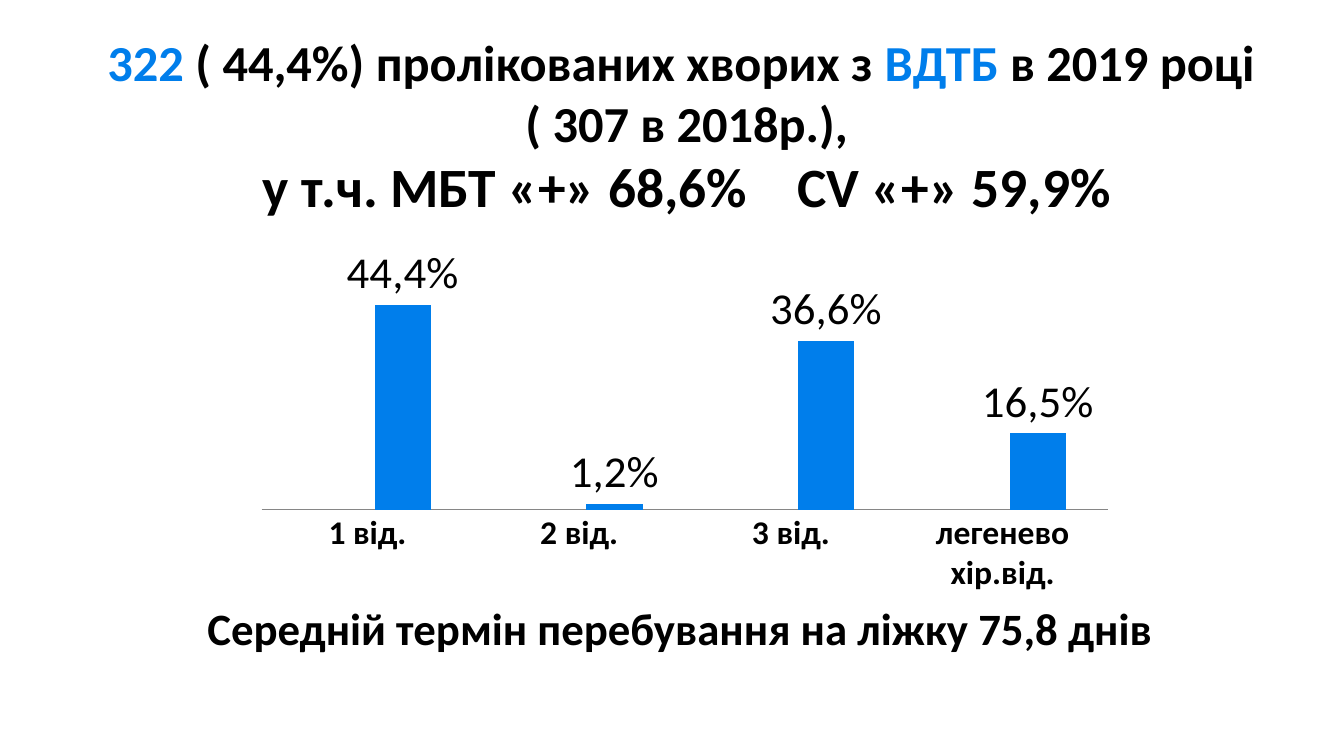
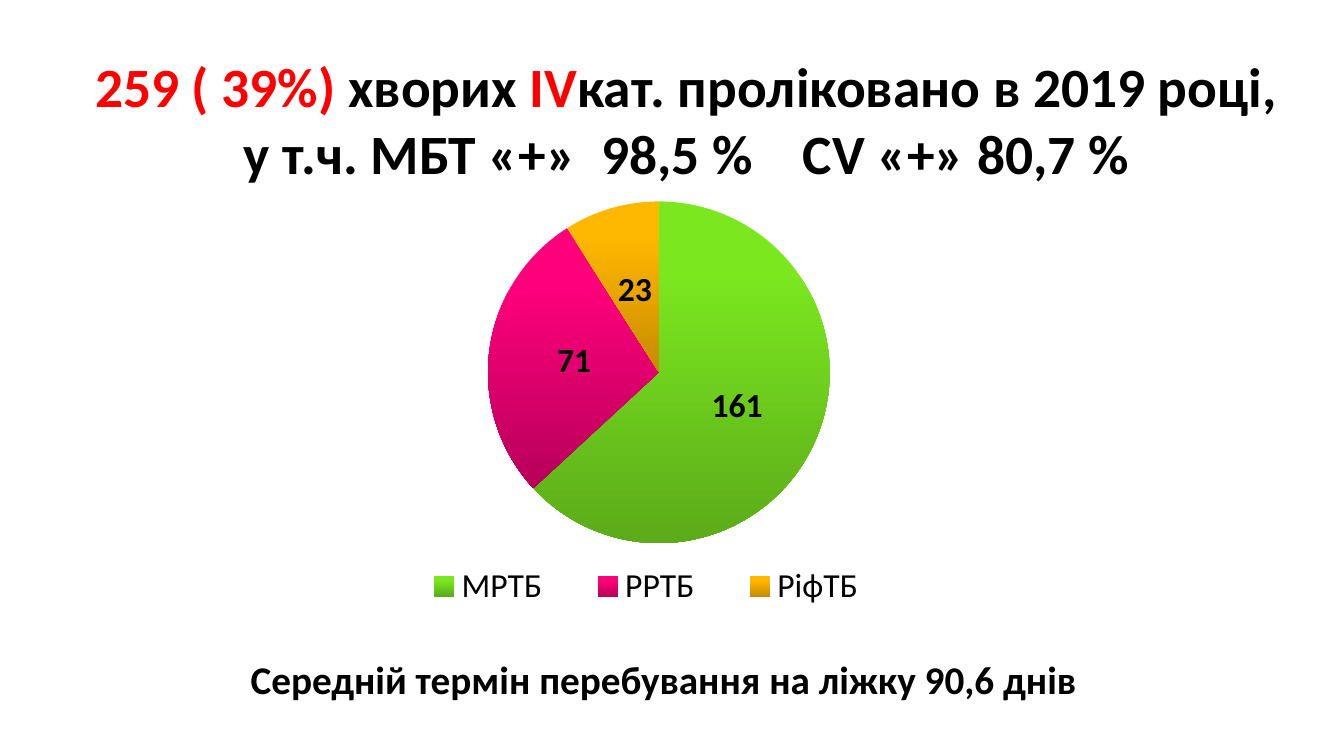
from lxml import etree
from pptx import Presentation
from pptx.chart.data import CategoryChartData
from pptx.dml.color import RGBColor
from pptx.enum import chart as ch, text
from pptx.oxml.ns import qn
from pptx.util import Cm, Pt

# Shared look
FONT = "Calibri"
SPACE_WIDTH = 0.226  # of the font size
COLORS = {
    "black": "000000", "blue": "007EEB", "red": "FF0000", "axis": "868686",
    "green": "7BE81F", "dark green": "5CAB1A",
    "pink": "FF007C", "dark pink": "B8005A",
    "amber": "FFB800", "dark amber": "C88A00",
}

# Content: title lines are lists of (text, colour) with one size per line, and
# a number stands for a gap that many spaces wide; boxes are left, top, width,
# height in cm
WARDS = {
    "title_box": (1.55, 1.88, 31.52, 2.54),
    "title": [
        (36, [("322 ", "blue"), ("( 44,4%) пролікованих хворих з ", "black"),
              ("ВДТБ", "blue"), (" в 2019 році ", "black")]),
        (36, [("( 307 в 2018р.),", "black")]),
        (39.6, [("у т.ч. МБТ «+» 68,6%", "black"), (4, "black"),
                ("CV «+» 59,9%", "black")]),
    ],
    "caption_box": (4.98, 15.01, 24.59, 1.63),
    "caption": ("Середній термін перебування на ліжку 75,8 днів", 32),
    "chart_box": (6.15, 6.2, 22.23, 8.81),
    "categories": ["1 від.", "2 від.", "3 від.", "легенево хір.від."],
    "series": [("Series 1", [None] * 4), ("Series 2", [44.4, 1.2, 36.6, 16.5])],
    "number_format": "0.0",
}
RESISTANCE = {
    "title_box": (1.96, 1.85, 30.66, 2.29),
    "title": [
        (39.6, [("259 ( 39%) ", "red"), ("хворих ", "black"), ("IV", "red"),
                ("кат. проліковано в 2019 році,", "black")]),
        (39.6, [("у т.ч. МБТ «+»", "black"), (2, "black"), ("98,5 %", "black"),
                (4, "black"), ("CV «+» 80,7 %", "black")]),
    ],
    "caption_box": (6.07, 16.4, 22.76, 1.45),
    "caption": ("Середній термін перебування на ліжку 90,6 днів", 28),
    "chart_box": (8.53, 4.75, 16.15, 10.9),
    "categories": ["МРТБ", "РРТБ", "РіфТБ"],
    "series": [("Series 1", [161, 71, 23])],
    "number_format": "0",
}
SLICES = ["green", "pink", "amber"]


def rgb(name):
    return RGBColor.from_string(COLORS[name])


def style(font, size, color="black", bold=False):
    font.name, font.size, font.bold = FONT, Pt(size), bold
    font.color.rgb = rgb(color)


def box(lengths):
    return [Cm(v) for v in lengths]


def set_layout(parent, index, inner=False, **fractions):
    """Place a plot area or legend by fractions of the chart frame."""
    for old in parent.findall(qn("c:layout")):
        parent.remove(old)
    layout = etree.Element(qn("c:layout"))
    manual = etree.SubElement(layout, qn("c:manualLayout"))
    settings = [("layoutTarget", "inner")] if inner else []
    settings += [("xMode", "edge"), ("yMode", "edge")]
    for tag, value in settings + list(fractions.items()):
        etree.SubElement(manual, qn("c:" + tag)).set("val", str(value))
    parent.insert(index, layout)


def add_title_run(p, words, size, color):
    """Add a run; a number becomes one space widened by letter spacing."""
    r = p.add_run()
    style(r.font, size, color, bold=True)
    if isinstance(words, int):
        r.text = " "
        extra = (words - 1) * SPACE_WIDTH * size
        r.font._element.set("spc", str(round(extra * 100)))
    else:
        r.text = words


def add_slide(prs, content, chart_type):
    """Add title, chart and caption; return the chart."""
    s = prs.slides.add_slide(prs.slide_layouts[5])

    # Title
    title = s.shapes.title
    title.left, title.top, title.width, title.height = box(content["title_box"])
    tf = title.text_frame
    tf.auto_size = text.MSO_AUTO_SIZE.NONE
    tf.vertical_anchor = text.MSO_ANCHOR.MIDDLE
    p = tf.paragraphs[0]
    p.alignment = text.PP_ALIGN.CENTER
    for i, (size, runs) in enumerate(content["title"]):
        if i:
            p.add_line_break()
        for words, color in runs:
            add_title_run(p, words, size, color)

    # Chart
    data = CategoryChartData(number_format=content["number_format"])
    data.categories = content["categories"]
    for name, values in content["series"]:
        data.add_series(name, values)
    chart = s.shapes.add_chart(chart_type, *box(content["chart_box"]), data).chart
    chart.has_title = chart.has_legend = False
    style(chart.font, 18)

    # Caption
    tf = s.shapes.add_textbox(*box(content["caption_box"])).text_frame
    tf.word_wrap = True
    p = tf.paragraphs[0]
    p.text, size = content["caption"]
    style(p.font, size, bold=True)
    return chart


def show_values(series, size, position):
    labels = series.data_labels
    labels.show_value = True
    labels.position = position
    style(labels.font, size, bold=True)


def format_columns(chart):
    plot = chart.plots[0]
    plot.gap_width, plot.overlap, plot.vary_by_categories = 150, -25, False
    outside = ch.XL_LABEL_POSITION.OUTSIDE_END
    for series, color in zip(plot.series, ("green", "blue")):
        series.format.fill.solid()
        series.format.fill.fore_color.rgb = rgb(color)
        show_values(series, 32, outside)

    series = plot.series[1]
    for i, value in enumerate(series.values):
        label = series.points[i].data_label
        r = label.text_frame.paragraphs[0].add_run()
        r.text = f"{value:.1f}%".replace(".", ",")
        style(r.font, 32)
        label.position = outside

    axis = chart.value_axis
    axis.minimum_scale, axis.maximum_scale = 0, 50
    axis.has_major_gridlines = axis.visible = False
    axis = chart.category_axis
    axis.major_tick_mark = ch.XL_TICK_MARK.NONE
    axis.format.line.color.rgb = rgb("axis")
    style(axis.tick_labels.font, 24, bold=True)
    set_layout(chart.element.find(".//" + qn("c:plotArea")), 0, inner=True,
               x=0.02, y=0.08, w=0.96, h=0.67)


def format_pie(chart):
    series = chart.plots[0].series[0]
    for i, color in enumerate(SLICES):
        fill = series.points[i].format.fill
        fill.gradient()
        fill.gradient_angle = 270
        shades = (color, 0.2), ("dark " + color, 1)
        for stop, (shade, position) in zip(fill.gradient_stops, shades):
            stop.color.rgb, stop.position = rgb(shade), position
    show_values(series, 24, ch.XL_LABEL_POSITION.CENTER)

    chart.has_legend = True
    legend = chart.legend
    legend.position = ch.XL_LEGEND_POSITION.BOTTOM
    legend.include_in_layout = False
    style(legend.font, 24)
    set_layout(chart.element.find(".//" + qn("c:plotArea")), 0, inner=True,
               x=0.23, y=0.03, w=0.54, h=0.79)
    set_layout(chart.element.find(".//" + qn("c:legend")), 1,
               x=0.08, y=0.87, w=0.8, h=0.1)


def main():
    prs = Presentation()
    prs.slide_width, prs.slide_height = Cm(33.87), Cm(19.05)
    format_columns(add_slide(prs, WARDS, ch.XL_CHART_TYPE.COLUMN_CLUSTERED))
    format_pie(add_slide(prs, RESISTANCE, ch.XL_CHART_TYPE.PIE))
    prs.save("out.pptx")


if __name__ == "__main__":
    main()
